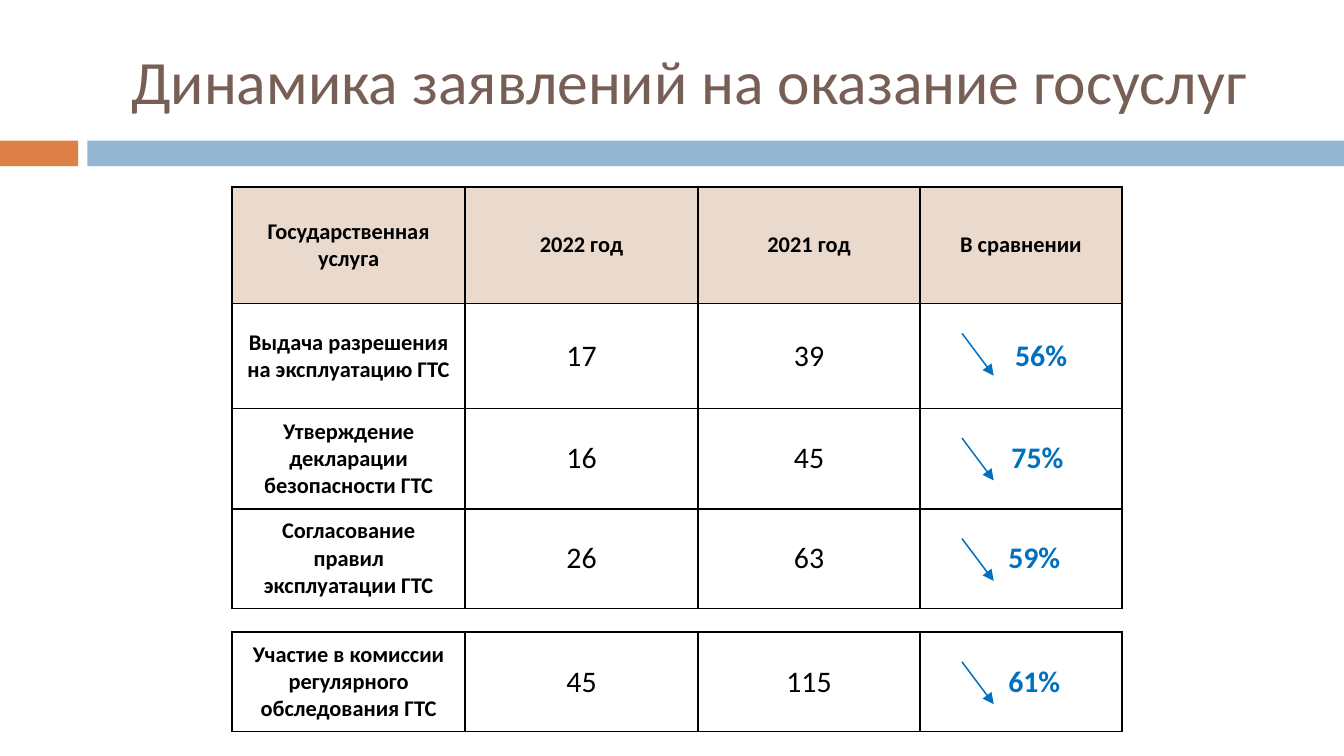
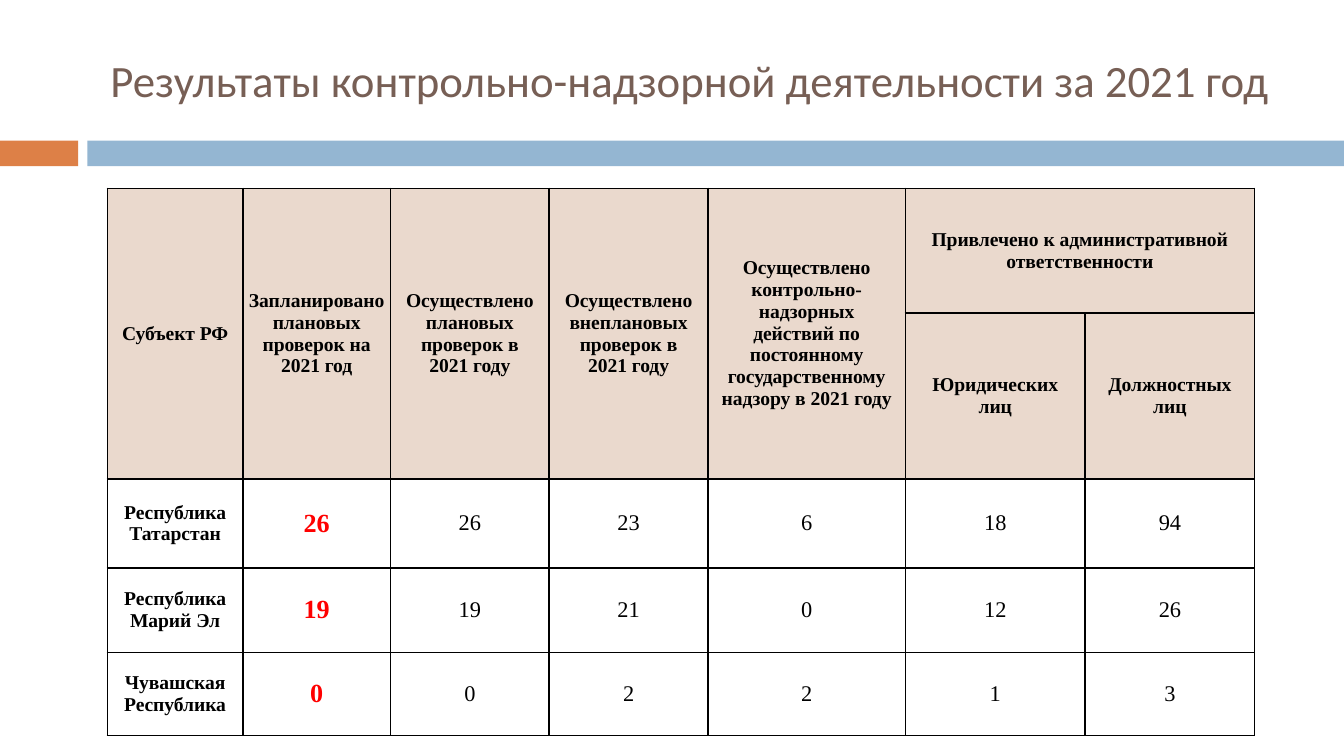
from lxml.etree import SubElement
from pptx import Presentation as Deck
from pptx.dml.color import RGBColor as Rgb
from pptx.enum.shapes import MSO_CONNECTOR as Link, MSO_SHAPE as Form
from pptx.enum.text import MSO_ANCHOR as Anchor, PP_ALIGN as Align
from pptx.oxml.ns import qn
from pptx.util import Cm, Pt

BLACK = Rgb(0x00, 0x00, 0x00)
BROWN = Rgb(0x77, 0x5F, 0x55)
ORANGE = Rgb(0xDD, 0x80, 0x47)
SKY = Rgb(0x94, 0xB6, 0xD2)
RUST = Rgb(0x96, 0x43, 0x05)
BLUE = Rgb(0x00, 0x70, 0xC0)
RED = Rgb(0xFF, 0x00, 0x00)

SANS, SERIF = "Calibri", "Times New Roman"
TITLE = {"name": SANS, "bold": False, "color": BROWN}

# Text formats of the service table
LABEL = {"name": SANS, "size": Pt(12), "bold": True, "color": BLACK}
COUNT = {**LABEL, "size": Pt(16), "bold": False}
SHARE = {**COUNT, "bold": True, "color": BLUE}

# Text formats of the control table
HEAD = {"name": SERIF, "size": Pt(10.5), "bold": True, "color": BLACK}
VALUE = {**HEAD, "size": Pt(12), "bold": False}
PLAN = {**HEAD, "size": Pt(14), "color": RED}

# Service table: place, column widths, row heights, contents
LEFT, TOP, LAST = 4.39, 3.53, 11.95
COLS = [4.4, 4.4, 4.2, 3.81]
ROWS = [2.21, 1.98, 1.9, 1.88]
TITLES = ["Государственная услуга", "2022 год", "2021 год", "В сравнении"]
# Each row ends with the left margin that makes room for the arrow
DATA = [
    ("Выдача разрешения на эксплуатацию ГТС", "17", "39", "56%", 1.02),
    ("Утверждение декларации безопасности ГТС", "16", "45", "75%", 0.88),
    ("Согласование правил эксплуатации ГТС", "26", "63", "59%", 0.76),
    ("Участие в комиссии регулярного обследования ГТС", "45", "115", "61%", 0.76),
]

# Control table
WIDTHS = [2.56, 2.79, 3, 3, 3.73, 3.4, 3.2]
HEIGHTS = [2.36, 3.13, 1.68, 1.6, 1.57]
HEADS = [
    "Субъект РФ",
    "Запланировано плановых проверок на 2021 год",
    "Осуществлено плановых проверок в 2021 году",
    "Осуществлено внеплановых проверок в 2021 году",
    "Осуществлено контрольно-надзорных действий по постоянному "
    "государственному надзору в 2021 году",
    "Привлечено к административной ответственности",
]
PARTS = ["Юридических лиц", "Должностных лиц"]
LANDS = [
    ("Республика Татарстан", "26", "26", "23", "6", "18", "94"),
    ("Республика Марий Эл", "19", "19", "21", "0", "12", "26"),
    ("Чувашская Республика", "0", "0", "2", "2", "1", "3"),
]


def style(font, look):
    for key, value in look.items():
        if key == "color":
            font.color.rgb = value
        else:
            setattr(font, key, value)


def write(frame, text, look):
    para = frame.paragraphs[0]
    para.alignment = Align.CENTER
    run = para.add_run()
    run.text = text
    style(run.font, look)


def band(slide, layout, left, width, color):
    """Draw a bar and hand it to the layout, behind its placeholders."""
    bar = slide.shapes.add_shape(Form.RECTANGLE, Cm(left), Cm(2.66),
                                 Cm(width), Cm(0.48))
    bar.shadow.inherit = False
    bar.fill.solid()
    bar.fill.fore_color.rgb = color
    bar.line.fill.background()
    layout.shapes.element.insert(2, bar.element)


def place(layout):
    """Set the title area once and drop the unused placeholders."""
    for box in list(layout.placeholders):
        if box.placeholder_format.idx:
            box.element.getparent().remove(box.element)
            continue
        area = {"left": 1.7, "top": 0.48, "width": 22.66, "height": 2.06}
        for key, value in area.items():
            setattr(box, key, Cm(value))


def page(deck, layout, text, size):
    slide = deck.slides.add_slide(layout)
    frame = slide.shapes.title.text_frame
    frame.word_wrap = True
    frame.vertical_anchor = Anchor.MIDDLE
    write(frame, text, {**TITLE, "size": Pt(size)})
    return slide


def edge(cell):
    """Black one-point lines on all four sides."""
    props = cell._tc.get_or_add_tcPr()
    for spot, side in enumerate(("lnL", "lnR", "lnT", "lnB")):
        line = SubElement(props, qn(f"a:{side}"), w=str(Pt(1)))
        fill = SubElement(line, qn("a:solidFill"))
        SubElement(fill, qn("a:srgbClr"), val=str(BLACK))
        props.insert(spot, line)


def tint(cell):
    cell.fill.solid()
    cell.fill.fore_color.rgb = RUST
    color = cell._tc.tcPr.find(".//" + qn("a:srgbClr"))
    SubElement(color, qn("a:alpha"), val="20000")


def grid(slide, left, top, cols, rows, heads=0):
    """Add a lined table whose first rows are tinted."""
    table = slide.shapes.add_table(len(rows), len(cols), Cm(left), Cm(top),
                                   Cm(sum(cols)), Cm(sum(rows))).table
    table.first_row = table.horz_banding = False
    for col, width in zip(table.columns, cols):
        col.width = Cm(width)
    for spot, (row, height) in enumerate(zip(table.rows, rows)):
        row.height = Cm(height)
        for cell in row.cells:
            if spot < heads:
                tint(cell)
            else:
                cell.fill.background()
            edge(cell)
    return table


def put(cell, text, look, left=0.26, right=0.26):
    cell.vertical_anchor = Anchor.MIDDLE
    cell.margin_left, cell.margin_right = Cm(left), Cm(right)
    write(cell.text_frame, text, look)


def arrow(slide, left, top):
    line = slide.shapes.add_connector(Link.STRAIGHT, Cm(left), Cm(top),
                                      Cm(left + 0.6), Cm(top + 0.8))
    line.line.color.rgb = BLUE
    line.line.width = Pt(0.79)
    SubElement(line.line._get_or_add_ln(), qn("a:tailEnd"), type="triangle")
    SubElement(line.element.spPr, qn("a:effectLst"))


def trend(slide):
    """Service table, with its last row set apart."""
    main_grid = grid(slide, LEFT, TOP, COLS, ROWS, heads=1)
    last_grid = grid(slide, LEFT, LAST, COLS, ROWS[-1:])
    for cell, text in zip(main_grid.rows[0].cells, TITLES):
        put(cell, text, LABEL)
    lines = [*list(main_grid.rows)[1:], last_grid.rows[0]]
    tops = [TOP + sum(ROWS[:n]) for n in (1, 2, 3)] + [LAST]
    for row, top, (*texts, gap) in zip(lines, tops, DATA):
        looks = (LABEL, COUNT, COUNT, SHARE)
        for cell, text, look in zip(row.cells, texts, looks):
            put(cell, text, look, gap if look is SHARE else 0.26)
        arrow(slide, 18.18, top + 0.56)


def check(slide):
    """Control table with a two-level head."""
    table = grid(slide, 2.03, 3.56, WIDTHS, HEIGHTS, heads=2)
    for col in range(5):
        table.cell(0, col).merge(table.cell(1, col))
    table.cell(0, 5).merge(table.cell(0, 6))
    for col, text in enumerate(HEADS):
        side = 0.1 if col == 1 else 0.2
        put(table.cell(0, col), text, HEAD, side, side)
    for col, text in enumerate(PARTS, 5):
        put(table.cell(1, col), text, HEAD)
    looks = [HEAD, PLAN] + [VALUE] * 5
    for spot, texts in enumerate(LANDS, 2):
        for cell, text, look in zip(table.rows[spot].cells, texts, looks):
            put(cell, text, look)


def main():
    deck = Deck()
    deck.slide_width, deck.slide_height = Cm(25.4), Cm(14.29)
    layout = deck.slide_layouts[5]
    place(layout)

    # Service requests
    first = page(deck, layout, "Динамика заявлений на оказание госуслуг", 33)
    band(first, layout, 0, 1.48, ORANGE)
    band(first, layout, 1.65, 23.75, SKY)
    trend(first)

    # Control results
    check(page(deck, layout,
               "Результаты контрольно-надзорной деятельности за 2021 год", 24))

    deck.save("out.pptx")


if __name__ == "__main__":
    main()
